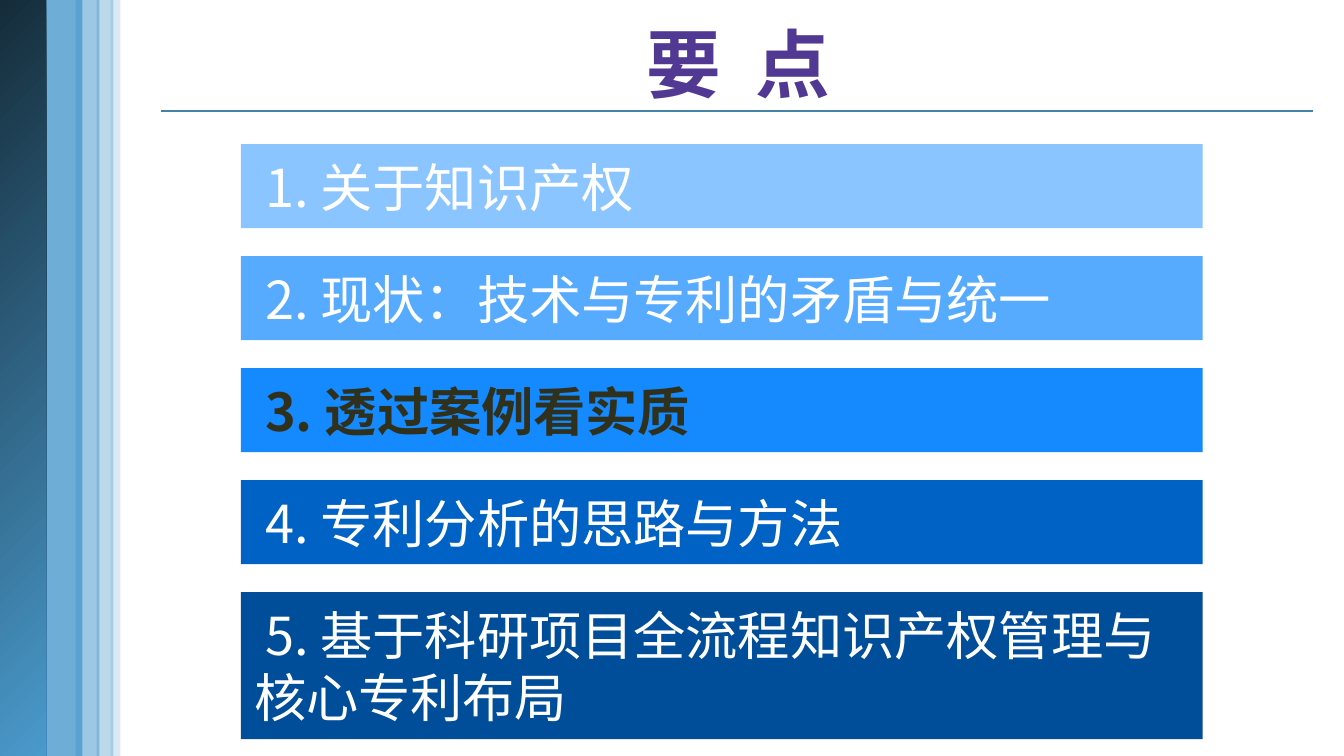
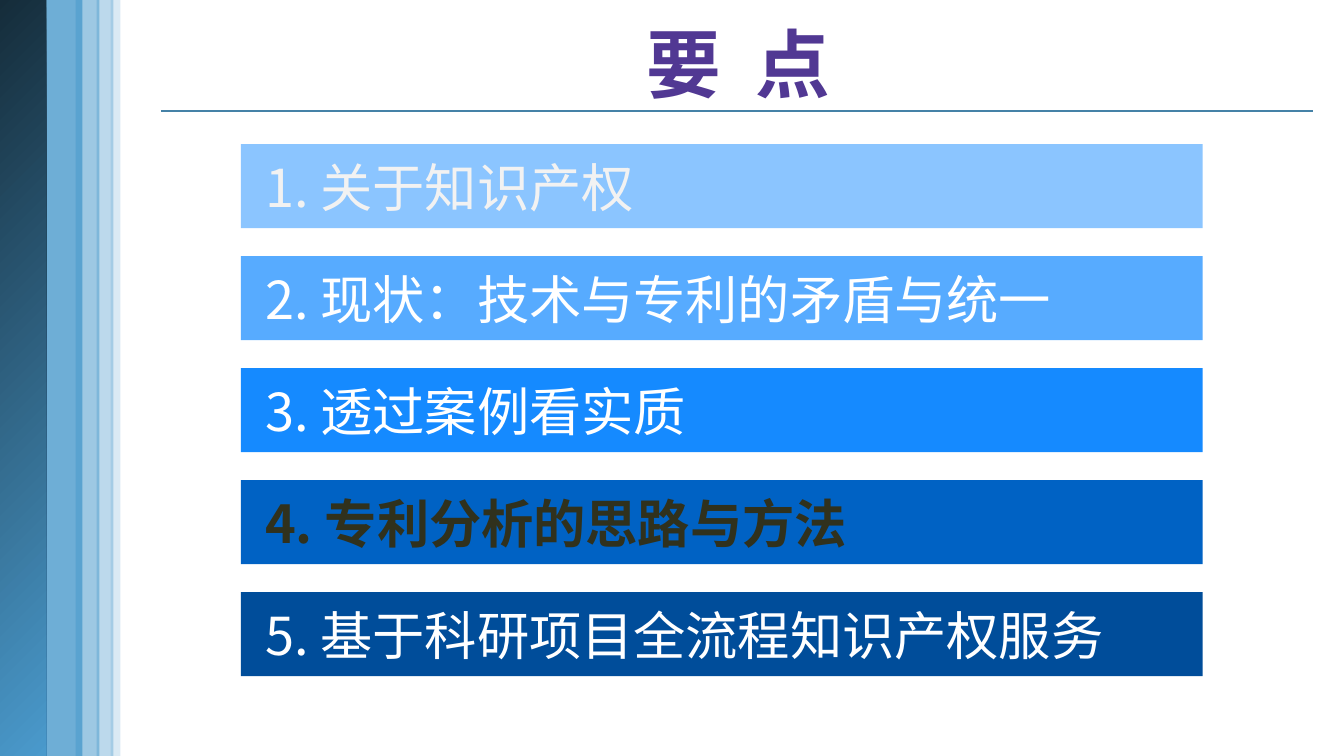
"""Build two agenda slides with a shared blue side band and title rule."""
from lxml import etree
from pptx import Presentation
from pptx.dml.color import RGBColor
from pptx.enum.dml import MSO_FILL
from pptx.enum.shapes import MSO_CONNECTOR, MSO_SHAPE
from pptx.enum.text import MSO_ANCHOR, MSO_AUTO_SIZE, PP_ALIGN
from pptx.oxml.ns import qn
from pptx.util import Pt

RECTANGLE = MSO_SHAPE.RECTANGLE
STRAIGHT = MSO_CONNECTOR.STRAIGHT
MIDDLE = MSO_ANCHOR.MIDDLE
NO_AUTOFIT = MSO_AUTO_SIZE.NONE
LEFT, CENTER = PP_ALIGN.LEFT, PP_ALIGN.CENTER
SOLID = MSO_FILL.SOLID

PX = 9525
FONT = "Noto Sans CJK SC"
BLUE, NAVY, RULE = "4A9ACC", "152C3A", "4582A7"
PURPLE, WHITE, PALE, DARK = "513893", "FFFFFF", "F2F2F2", "30311D"

BANDS = [
    (29, 0, 30, 542, 80),
    (-1, 0, 34, 540, None),
    (79, -1, 7, 541, 20),
    (54, 0, 17, 541, 54),
    (69, 0, 12, 541, 37),
]
BAR_COLORS = ["8BC5FF", "57ABFF", "158AFF", "0062C4", "004D9A"]
BAR_LEFT, BAR_TOP, BAR_WIDTH, BAR_HEIGHT, BAR_PITCH = 172, 103, 687, 60, 80
TOPICS = ["关于知识产权", "现状：技术与专利的矛盾与统一", "透过案例看实质", "专利分析的思路与方法"]
AGENDAS = [
    (3, WHITE, "基于科研项目全流程知识产权管理与核心专利布局", 105),
    (4, PALE, "基于科研项目全流程知识产权服务", BAR_HEIGHT),
]


def rgb(color):
    return RGBColor.from_string(color)


def write(shape, text, size, color, bold, alignment):
    frame = shape.text_frame
    frame.word_wrap = True
    frame.auto_size = NO_AUTOFIT
    frame.vertical_anchor = MIDDLE
    paragraph = frame.paragraphs[0]
    paragraph.text = text
    paragraph.alignment = alignment
    font = paragraph.font
    font.name, font.size, font.bold = FONT, Pt(size), bold
    font.color.rgb = rgb(color)
    properties = paragraph._p.get_or_add_pPr()
    east_asian = etree.SubElement(properties.find(qn("a:defRPr")), qn("a:ea"))
    east_asian.set("typeface", FONT)
    return properties


presentation = Presentation()
presentation.slide_width = 960 * PX
presentation.slide_height = 540 * PX
layout = presentation.slide_layouts[5]
for placeholder in list(layout.placeholders)[1:]:
    layout.shapes.element.remove(placeholder.element)
slides = [presentation.slides.add_slide(layout) for agenda in AGENDAS]

shapes = slides[0].shapes
rule = shapes.add_connector(STRAIGHT, 115 * PX, 79 * PX, 938 * PX, 79 * PX)
rule.line.color.rgb = rgb(RULE)
rule.line.width = Pt(1)
etree.SubElement(rule.element.spPr, qn("a:effectLst"))
shared = [rule]
for left, top, width, height, opacity in BANDS:
    band = shapes.add_shape(RECTANGLE, left * PX, top * PX, width * PX, height * PX)
    band.shadow.inherit = False
    band.line.fill.background()
    if opacity is None:
        band.fill.gradient()
        band.fill.gradient_angle = 315
        for stop, color, position in zip(band.fill.gradient_stops, (NAVY, BLUE), (0, 1)):
            stop.color.rgb = rgb(color)
            stop.position = position
    else:
        band.fill.solid()
        band.fill.fore_color.rgb = rgb(BLUE)
        color_element = band.element.spPr.find(".//" + qn("a:srgbClr"))
        etree.SubElement(color_element, qn("a:alpha")).set("val", str(opacity * 1000))
    shared.append(band)
for shape in shared:
    layout.shapes.element.append(shape.element)

for slide, (active, first_color, last_topic, last_height) in zip(slides, AGENDAS):
    title = slide.shapes.title
    title.left, title.top, title.width, title.height = 110 * PX, 5 * PX, 835 * PX, 80 * PX
    write(title, "要  点", 40, PURPLE, True, CENTER)

    topics = TOPICS + [last_topic]
    for number, (topic, fill) in enumerate(zip(topics, BAR_COLORS), 1):
        top = BAR_TOP + (number - 1) * BAR_PITCH
        height = last_height if number == len(topics) else BAR_HEIGHT
        bar = slide.shapes.add_shape(
            RECTANGLE, BAR_LEFT * PX, top * PX, BAR_WIDTH * PX, height * PX)
        bar.shadow.inherit = False
        bar.line.fill.background()
        bar.fill.solid()
        bar.fill.fore_color.rgb = rgb(fill)
        highlighted = number == active
        color = DARK if highlighted else first_color if number == 1 else WHITE
        properties = write(bar, f"{number}. {topic}", 28, color, highlighted, LEFT)
        properties.set("indent", str(8 * PX))

presentation.save("out.pptx")
